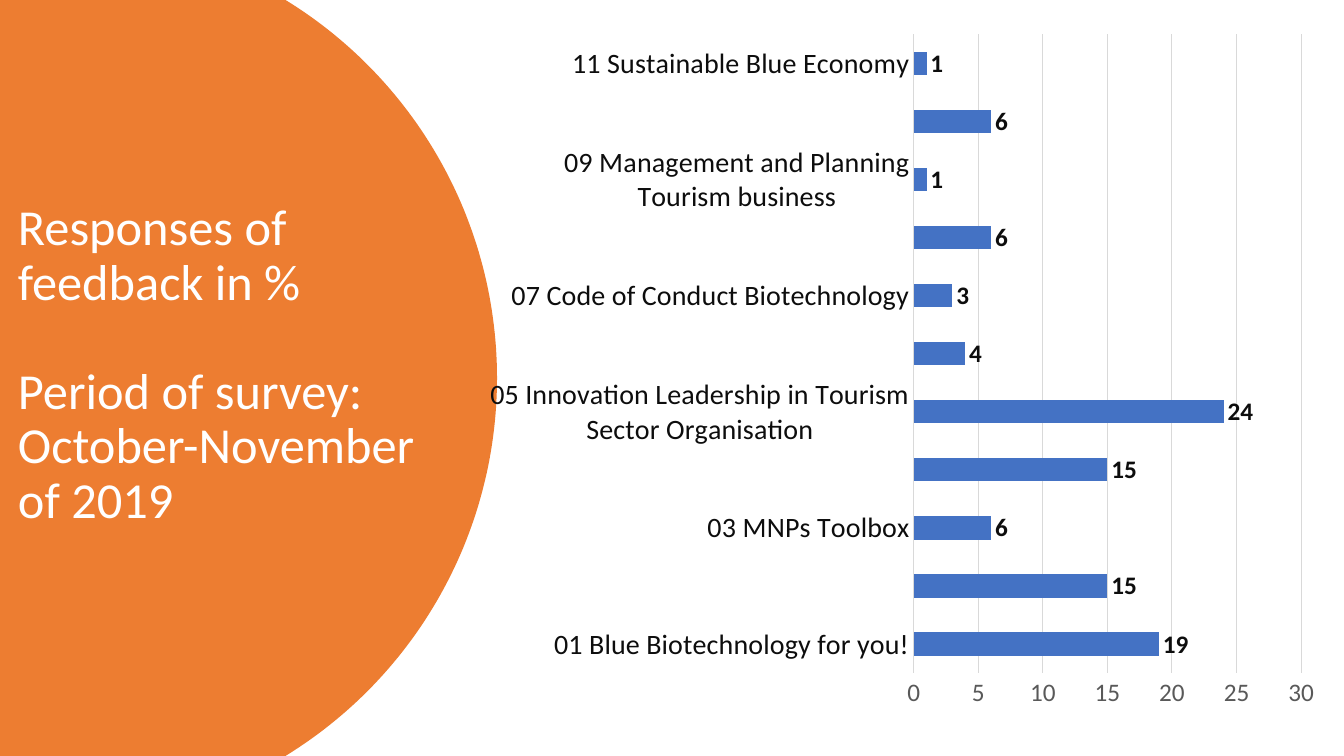
from math import asin, cos, sin
from lxml.etree import SubElement
from pptx import Presentation
from pptx.chart.data import CategoryChartData
from pptx.dml.color import RGBColor
from pptx.enum.chart import XL_CHART_TYPE, XL_LABEL_POSITION, XL_TICK_MARK
from pptx.enum.text import MSO_ANCHOR, PP_ALIGN
from pptx.oxml.ns import qn
from pptx.util import Inches, Pt

TITLE = ["Responses of feedback in %", "Period of survey: October-November of 2019"]
SCORES = [
    ("01 Blue Biotechnology for you!", 19),
    ("", 15),
    ("03 MNPs Toolbox", 6),
    ("", 15),
    ("05 Innovation Leadership in Tourism Sector Organisation", 24),
    ("", 4),
    ("07 Code of Conduct Biotechnology", 3),
    ("", 6),
    ("09 Management and Planning Tourism business", 1),
    ("", 6),
    ("11 Sustainable Blue Economy", 1),
]
COLORS = {"panel": "ED7D31", "title": "FFFFFF", "bar": "4472C4", "label": "0D0D0D",
          "scale": "595959", "grid": "D9D9D9", "base": "000000"}
FONT = "Calibri"
WIDTH, HEIGHT = 13.33, 7.5
CENTER, RADIUS, STEPS = 0.53, 4.4, 120
TITLE_BOX = (0.08, 0.51, 4.48, 6.24)
CHART_BOX = (4.84, 0.16, 8.41, 7.18)
PLOT = {"x": 0.502, "y": 0.025, "w": 0.457, "h": 0.883}


def paint(font, size, color, bold=False):
    font.name, font.size, font.bold = FONT, Pt(size), bold
    font.color.rgb = RGBColor.from_string(COLORS[color])


def fill(shape, color):
    shape.fill.solid()
    shape.fill.fore_color.rgb = RGBColor.from_string(COLORS[color])


def add_panel(slide):
    half = HEIGHT / 2
    sweep = asin(half / RADIUS)
    angles = [sweep * (2 * i / STEPS - 1) for i in range(STEPS + 1)]
    arc = [(CENTER + RADIUS * cos(a), half + RADIUS * sin(a)) for a in angles]
    points = [(Inches(x), Inches(y)) for x, y in arc + [(0, HEIGHT)]]
    pen = slide.shapes.build_freeform(0, 0)
    pen.add_line_segments(points, close=True)
    panel = pen.convert_to_shape()
    panel.shadow.inherit = False
    fill(panel, "panel")
    panel.line.fill.background()


def add_title(slide):
    frame = slide.shapes.add_textbox(*map(Inches, TITLE_BOX)).text_frame
    frame.word_wrap = True
    frame.vertical_anchor = MSO_ANCHOR.MIDDLE
    frame.text = "\n".join(TITLE)
    for i, para in enumerate(frame.paragraphs):
        para.alignment = PP_ALIGN.LEFT
        para.line_spacing = 0.9
        para.space_before = Pt(39 * i)
        paint(para.font, 36, "title")


def set_plot(chart):
    area = chart._chartSpace.chart.plotArea
    layout = area.find(qn("c:layout"))
    if layout is None:
        layout = SubElement(area, qn("c:layout"))
        area.insert(0, layout)
    manual = SubElement(layout, qn("c:manualLayout"))
    parts = [("layoutTarget", "inner"), ("xMode", "edge"), ("yMode", "edge"), *PLOT.items()]
    for name, value in parts:
        SubElement(manual, qn("c:" + name)).set("val", str(value))


def add_bars(slide):
    names, values = zip(*SCORES)
    data = CategoryChartData()
    data.categories = names
    data.add_series("Series 1", values)
    chart = slide.shapes.add_chart(
        XL_CHART_TYPE.BAR_CLUSTERED, *map(Inches, CHART_BOX), data).chart
    chart.has_legend = chart.has_title = False
    paint(chart.font, 18, "base")
    set_plot(chart)

    for axis, size, color in ((chart.category_axis, 20, "label"),
                              (chart.value_axis, 18, "scale")):
        axis.major_tick_mark = axis.minor_tick_mark = XL_TICK_MARK.NONE
        axis.format.line.fill.background()
        paint(axis.tick_labels.font, size, color)
    chart.category_axis.has_major_gridlines = False
    scale = chart.value_axis
    scale.minimum_scale, scale.maximum_scale, scale.major_unit = 0, 30, 5
    scale.has_major_gridlines = True
    grid = scale.major_gridlines.format.line
    grid.width = Pt(0.75)
    grid.color.rgb = RGBColor.from_string(COLORS["grid"])

    plot = chart.plots[0]
    plot.gap_width = 150
    plot.vary_by_categories = False
    bars = plot.series[0]
    fill(bars.format, "bar")
    labels = bars.data_labels
    labels.show_value = True
    labels.position = XL_LABEL_POSITION.OUTSIDE_END
    paint(labels.font, 18, "label", True)


def main():
    deck = Presentation()
    deck.slide_width, deck.slide_height = Inches(WIDTH), Inches(HEIGHT)
    slide = deck.slides.add_slide(deck.slide_layouts[6])
    add_panel(slide)
    add_title(slide)
    add_bars(slide)
    deck.save("out.pptx")


if __name__ == "__main__":
    main()
